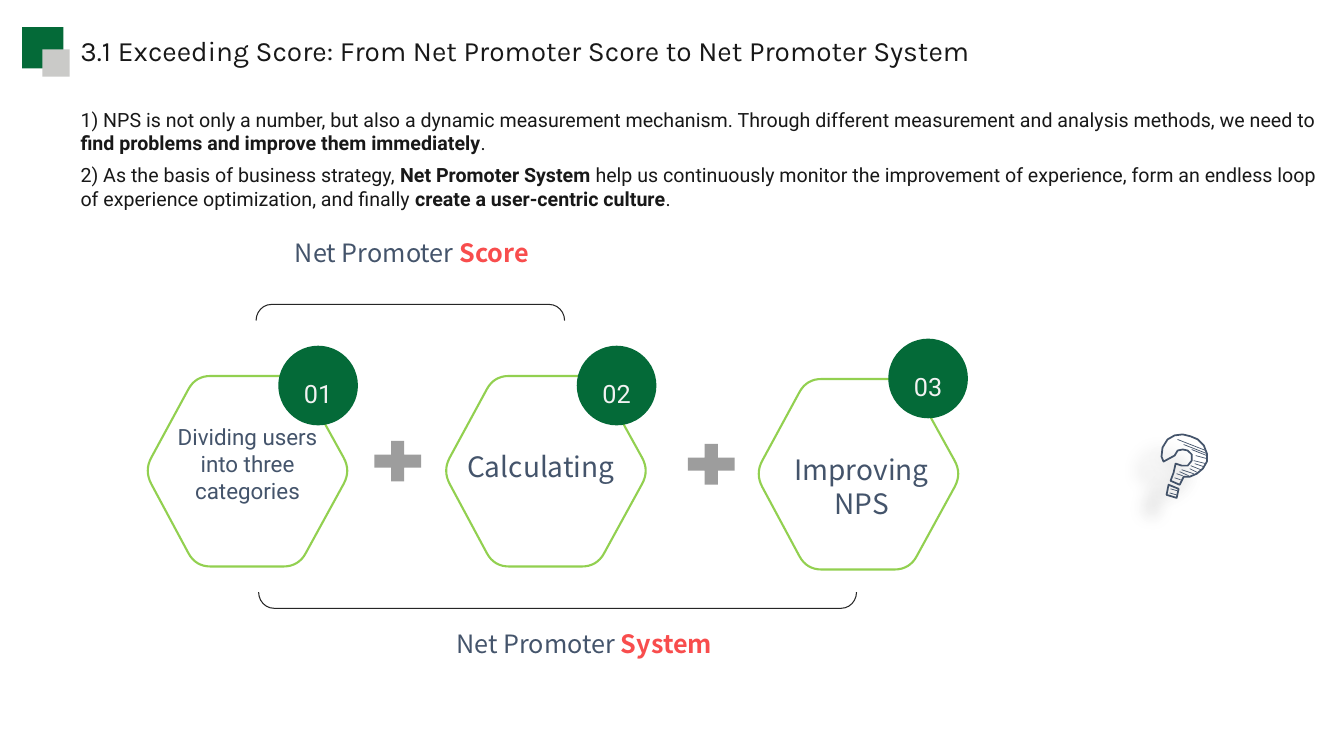
from dataclasses import dataclass
from math import dist

from lxml import etree
from pptx import Presentation
from pptx.dml.color import RGBColor
from pptx.enum.shapes import MSO_SHAPE as Shape
from pptx.enum.text import MSO_ANCHOR as Anchor, PP_ALIGN as Align
from pptx.oxml import parse_xml
from pptx.util import Inches, Pt


@dataclass(frozen=True)
class Theme:
    green: str = "046A38"
    lime: str = "92D050"
    pale_grey: str = "CACAC8"
    plus_grey: str = "9D9D9D"
    ink: str = "181818"
    bracket: str = "262626"
    slate: str = "44546B"
    red: str = "F84D4D"
    badge_text: str = "F2F2F2"
    title_font: str = "Karla"
    body_font: str = "Roboto"
    label_font: str = "Noto Sans CJK SC"
    title_size: int = 20
    body_size: int = 14
    step_size: int = 20
    small_step_size: int = 16
    caption_size: int = 18


theme = Theme()
deck = Presentation()
deck.slide_width, deck.slide_height = Inches(13.33), Inches(7.5)
page = deck.slides.add_slide(deck.slide_layouts[6])


def paint(shape, fill=None, line=None, width=1):
    shape.shadow.inherit = False
    if fill:
        shape.fill.solid()
        shape.fill.fore_color.rgb = RGBColor.from_string(fill)
    else:
        shape.fill.background()
    if line:
        shape.line.color.rgb = RGBColor.from_string(line)
        shape.line.width = Pt(width)
    else:
        shape.line.fill.background()


def write(place, paragraphs, font, size, color, align=Align.CENTER, accent=None):
    """Add a text box; in each paragraph every second span is bold, in the accent colour."""
    box = page.shapes.add_textbox(*map(Inches, place))
    frame = box.text_frame
    frame.word_wrap = True
    for index, spans in enumerate(paragraphs):
        para = frame.add_paragraph() if index else frame.paragraphs[0]
        para.alignment = align
        if font == theme.label_font:
            para.line_spacing = Pt(1.2 * size)
        for number, text in enumerate(spans):
            span = para.add_run()
            span.text = text
            bold = number % 2 == 1
            span.font.name, span.font.size, span.font.bold = font, Pt(size), bold
            span.font.color.rgb = RGBColor.from_string(accent if bold and accent else color)
    return box


# Title marker
for place, color in [((0.22, 0.27, 0.41, 0.41), theme.green),
                     ((0.42, 0.49, 0.27, 0.27), theme.pale_grey)]:
    square = page.shapes.add_shape(Shape.RECTANGLE, *map(Inches, place))
    paint(square, color)

# Introduction
intro = write((0.7, 1.02, 12.51, 1.13), [
    ["1) NPS is not only a number, but also a dynamic measurement mechanism. Through different "
     "measurement and analysis methods, we need to ",
     "find problems and improve them immediately", "."],
    ["2) As the basis of business strategy, ", "Net Promoter System ",
     "help us continuously monitor the improvement of experience, form an endless loop of "
     "experience optimization, and finally ", "create a user-centric culture", "."],
], theme.body_font, theme.body_size, theme.ink, Align.LEFT)
for para in intro.text_frame.paragraphs:
    para.space_before = para.space_after = Pt(3)

# Steps: rounded hexagon, label, numbered badge
corners = [(0.47, 0), (1.49, 0), (2.01, 0.94), (1.49, 1.89), (0.47, 1.89), (-0.04, 0.94)]
corner_cut, corner_steps = 0.15, 8
hexagon = []
for index, corner in enumerate(corners):
    start, end = [
        [c + (n - c) * corner_cut / dist(corner, neighbour) for c, n in zip(corner, neighbour)]
        for neighbour in (corners[index - 1], corners[(index + 1) % len(corners)])
    ]
    for step in range(corner_steps + 1):
        t = step / corner_steps
        hexagon.append([(1 - t) ** 2 * a + 2 * t * (1 - t) * c + t ** 2 * b
                        for a, c, b in zip(start, corner, end)])

steps = [
    (1.47, 3.73, "Dividing users into three categories", (1.63, 4.15, 1.65, 1.18),
     theme.body_font, theme.small_step_size, (2.76, 3.43)),
    (4.43, 3.73, "Calculating", (4.46, 4.41, 1.81, 0.44),
     theme.label_font, theme.step_size, (5.72, 3.43)),
    (7.53, 3.76, "Improving NPS", (7.72, 4.44, 1.65, 0.77),
     theme.label_font, theme.step_size, (8.81, 3.36)),
]
for number, (left, top, label, place, font, size, badge_corner) in enumerate(steps, 1):
    points = [(Inches(left + x), Inches(top + y)) for x, y in hexagon]
    builder = page.shapes.build_freeform(*points[0])
    builder.add_line_segments(points[1:], close=True)
    paint(builder.convert_to_shape(), line=theme.lime, width=1.5)

    write(place, [[label]], font, size, theme.slate)

    badge = page.shapes.add_shape(Shape.OVAL, *map(Inches, (*badge_corner, 0.79, 0.79)))
    paint(badge, theme.green)
    badge.text_frame.text = f"{number:02}"
    badge.text_frame.vertical_anchor = Anchor.MIDDLE
    para = badge.text_frame.paragraphs[0]
    para.alignment, para.line_spacing = Align.CENTER, 1.5
    para.font.name, para.font.size = theme.body_font, Pt(theme.caption_size)
    para.runs[0].font.color.rgb = RGBColor.from_string(theme.badge_text)

for left, top in [(3.63, 4.3), (6.74, 4.33)]:
    plus = page.shapes.add_shape(Shape.MATH_PLUS, *map(Inches, (left, top, 0.63, 0.55)))
    paint(plus, theme.plus_grey)

# Brackets and their captions
for bracket_place, turn, word, caption_place in [
    ((3.99, 1.57, 0.16, 3.06), 270, "Score", (2.51, 2.31, 3.15, 0.4)),
    ((5.45, 2.99, 0.16, 5.93), 90, "System", (4.22, 6.18, 3.15, 0.4)),
]:
    bracket = page.shapes.add_shape(Shape.RIGHT_BRACKET, *map(Inches, bracket_place))
    bracket.rotation = turn
    bracket.adjustments[0] = 0.953
    paint(bracket, line=theme.bracket, width=0.75)
    write(caption_place, [["Net Promoter ", word]], theme.label_font, theme.caption_size,
          theme.slate, accent=theme.red)

# Sketched question mark: hook, dot and hatching
hook = [
    (11.54, 4.58), (11.52, 4.53), (11.53, 4.44), (11.58, 4.36), (11.65, 4.32), (11.73, 4.31),
    (11.81, 4.33), (11.88, 4.36), (11.94, 4.42), (11.97, 4.5), (11.97, 4.58), (11.93, 4.65),
    (11.87, 4.7), (11.8, 4.73), (11.74, 4.73), (11.72, 4.77), (11.7, 4.81), (11.61, 4.77),
    (11.64, 4.69), (11.66, 4.6), (11.72, 4.62), (11.78, 4.62), (11.82, 4.57), (11.82, 4.51),
    (11.78, 4.47), (11.73, 4.46), (11.68, 4.47), (11.65, 4.52),
]
dot = [(11.59, 4.81), (11.69, 4.85), (11.67, 4.94), (11.57, 4.91)]
hatching = [
    [(11.68, 4.36), (11.96, 4.47)], [(11.74, 4.41), (11.97, 4.5)],
    [(11.82, 4.46), (11.97, 4.52)], [(11.86, 4.52), (11.97, 4.55)],
    [(11.84, 4.57), (11.96, 4.6)], [(11.85, 4.6), (11.94, 4.63)],
    [(11.81, 4.62), (11.91, 4.66)], [(11.8, 4.65), (11.88, 4.69)],
    [(11.72, 4.66), (11.84, 4.7)], [(11.7, 4.68), (11.79, 4.72)],
    [(11.67, 4.7), (11.73, 4.72)], [(11.65, 4.74), (11.71, 4.76)],
    [(11.61, 4.85), (11.68, 4.87)], [(11.6, 4.89), (11.67, 4.91)],
]
for strokes, width in [([hook, dot], 1.25), (hatching, 0.5)]:
    builder = page.shapes.build_freeform(*map(Inches, strokes[0][0]))
    for index, stroke in enumerate(strokes):
        points = [(Inches(x), Inches(y)) for x, y in stroke]
        if index:
            builder.move_to(*points[0])
        builder.add_line_segments(points[1:], close=len(points) > 2)
    sketch = builder.convert_to_shape()
    paint(sketch, line=theme.slate, width=width)
    effects = sketch.element.spPr.find("{*}effectLst")
    shadow = parse_xml(
        '<a:outerShdw xmlns:a="http://schemas.openxmlformats.org/drawingml/2006/main" '
        f'blurRad="{Pt(11.8)}" dist="{Pt(19.7)}" dir="{141 * 60000}" rotWithShape="0">'
        '<a:srgbClr val="000000"><a:alpha val="28000"/></a:srgbClr></a:outerShdw>')
    effects.append(shadow)

# Title
write((0.7, 0.28, 12.6, 0.63),
      [["3.1 Exceeding Score: From Net Promoter Score to Net Promoter System"]],
      theme.title_font, theme.title_size, theme.ink, Align.LEFT)

deck.save("out.pptx")
